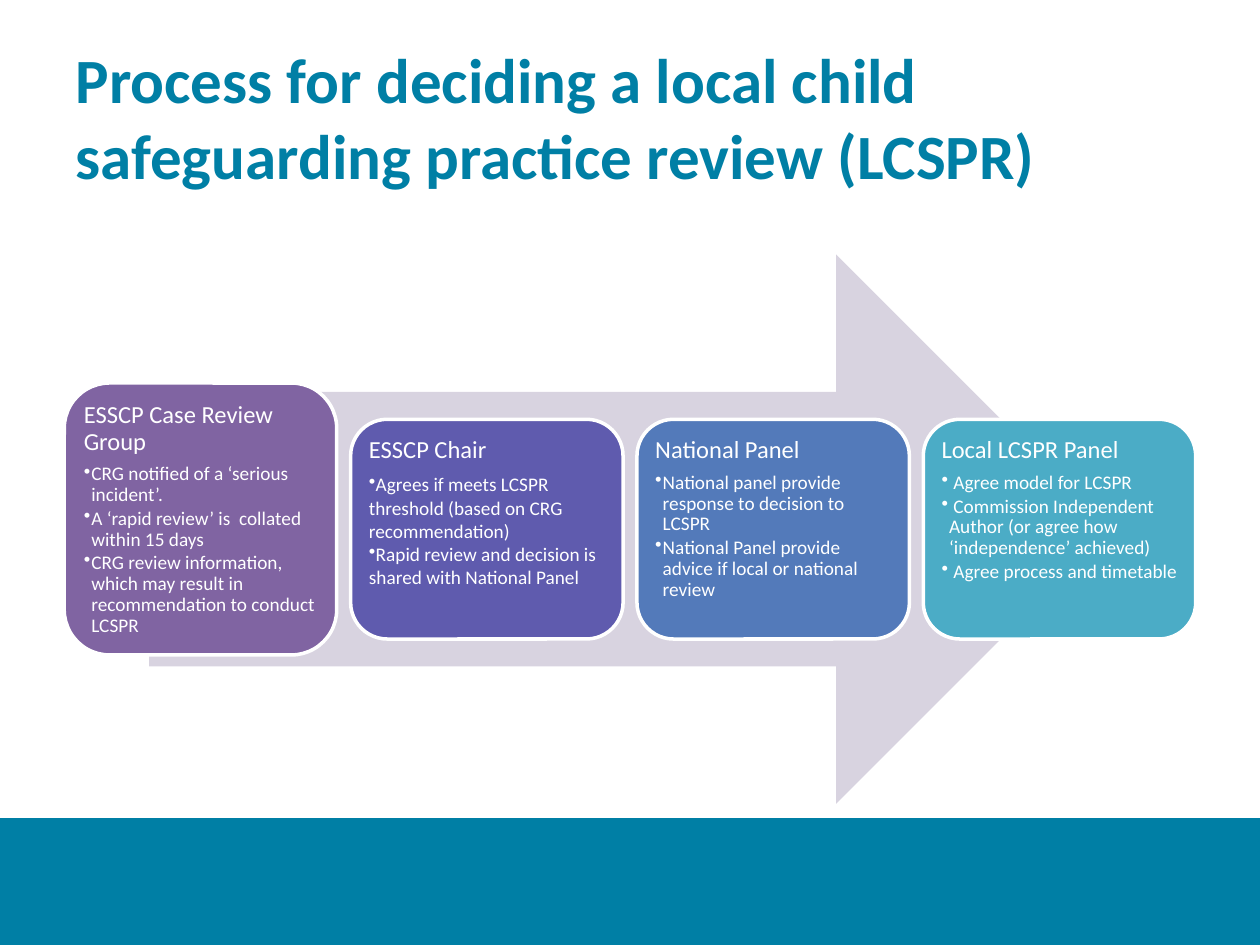
from lxml import etree
from pptx import Presentation
from pptx.dml.color import RGBColor
from pptx.enum.shapes import MSO_SHAPE as SHAPE
from pptx.enum.text import MSO_ANCHOR as ANCHOR, PP_ALIGN as ALIGN
from pptx.oxml.ns import qn
from pptx.util import Inches, Pt

TEAL = RGBColor(0x00, 0x7F, 0xA5)
WHITE = RGBColor(0xFF, 0xFF, 0xFF)
LILAC = RGBColor(0xD8, 0xD3, 0xE0)
PURPLE = RGBColor(0x80, 0x64, 0xA2)
INDIGO = RGBColor(0x5F, 0x5B, 0xAE)
BLUE = RGBColor(0x53, 0x7A, 0xBA)
AQUA = RGBColor(0x4B, 0xAC, 0xC6)
FONT = "Calibri"
WIDTH, HEIGHT = 10, 7.5
GAP = 0.11
HANG = 0.06

SMALL = {"top": 0.3, "height": 0.4, "inset": 0.06}
STAGES = [
    {"head": "ESSCP Case Review Group", "fill": PURPLE,
     "top": 0.234, "height": 0.495, "inset": 0.05,
     "bullets": ["CRG notified of a ‘serious incident’.",
                 "A ‘rapid review’ is  collated within 15 days",
                 "CRG review information, which may result in "
                 "recommendation to conduct LCSPR"]},
    {"head": "ESSCP Chair", "fill": INDIGO, **SMALL,
     "bullet_format": {"hang": 0, "spacing": 1, "after": 0},
     "bullets": ["Agrees if meets LCSPR threshold (based on CRG recommendation)",
                 "Rapid review and decision is shared with National Panel"]},
    {"head": "National Panel", "fill": BLUE, **SMALL,
     "bullets": ["National panel provide response to decision to LCSPR",
                 "National Panel provide advice if local or national review"]},
    {"head": "Local LCSPR Panel", "fill": AQUA, **SMALL,
     "bullets": [" Agree model for LCSPR",
                 " Commission Independent Author (or agree how "
                 "‘independence’ achieved)",
                 " Agree process and timetable"]},
]


def add_text(p, text, size, color=WHITE, bold=False, bullet=False, hang=0,
             spacing=None, after=0):
    if bullet:
        p.level = 1
        pPr = p._p.get_or_add_pPr()
        pPr.set("marL", str(Inches(hang)))
        pPr.set("indent", str(-Inches(hang)))
        etree.SubElement(pPr, qn("a:buChar")).set("char", "•")
    p.alignment = ALIGN.LEFT
    p.space_before = Pt(0)
    p.space_after = Pt(after)
    if spacing:
        p.line_spacing = spacing
    r = p.add_run()
    r.text = text
    r.font.name, r.font.size, r.font.bold = FONT, Pt(size), bold
    r.font.color.rgb = color


def add_block(slide, kind, box, fill, line=None):
    sp = slide.shapes.add_shape(kind, *map(Inches, box))
    sp.shadow.inherit = False
    sp.fill.solid()
    sp.fill.fore_color.rgb = fill
    if line is None:
        sp.line.fill.background()
    else:
        sp.line.color.rgb = line
        sp.line.width = Pt(2)
    return sp


def add_title(slide, box, text):
    sp = slide.shapes.title
    sp.left, sp.top, sp.width, sp.height = map(Inches, box)
    tf = sp.text_frame
    tf.word_wrap = True
    tf.vertical_anchor = ANCHOR.MIDDLE
    add_text(tf.paragraphs[0], text, 36, color=TEAL, bold=True)


def add_stage(slide, box, stage):
    sp = add_block(slide, SHAPE.ROUNDED_RECTANGLE, box, stage["fill"], WHITE)
    tf = sp.text_frame
    tf.word_wrap = True
    tf.vertical_anchor = ANCHOR.TOP
    tf.margin_left = tf.margin_right = Inches(stage["inset"])
    tf.margin_top = tf.margin_bottom = Inches(stage["inset"])
    add_text(tf.paragraphs[0], stage["head"], 14, spacing=0.9, after=5)
    style = stage.get("bullet_format",
                      {"hang": HANG, "spacing": 0.9, "after": 1.65})
    for text in stage["bullets"]:
        add_text(tf.add_paragraph(), text, 11, bullet=True, **style)


def add_process(slide, box, stages):
    x, y, w, h = box
    add_block(slide, SHAPE.RIGHT_ARROW,
              (x + 0.075 * w, y, 0.85 * w, h), LILAC)
    card_w = (w - GAP * (len(stages) - 1)) / len(stages)
    for i, stage in enumerate(stages):
        add_stage(slide, (x + i * (card_w + GAP), y + stage["top"] * h,
                          card_w, stage["height"] * h), stage)


def main():
    prs = Presentation()
    prs.slide_width, prs.slide_height = Inches(WIDTH), Inches(HEIGHT)
    slide = prs.slides.add_slide(prs.slide_layouts[5])
    add_block(slide, SHAPE.RECTANGLE,
              (0, 0.868 * HEIGHT, WIDTH, 0.132 * HEIGHT), TEAL, TEAL)
    add_title(slide, (0.05 * WIDTH, 0.04 * HEIGHT, 0.9 * WIDTH, 1.25),
              "Process for deciding a local child safeguarding "
              "practice review (LCSPR)")
    add_process(slide, (0.51, 2.02, 8.98, 4.36), STAGES)
    prs.save("out.pptx")


if __name__ == "__main__":
    main()
